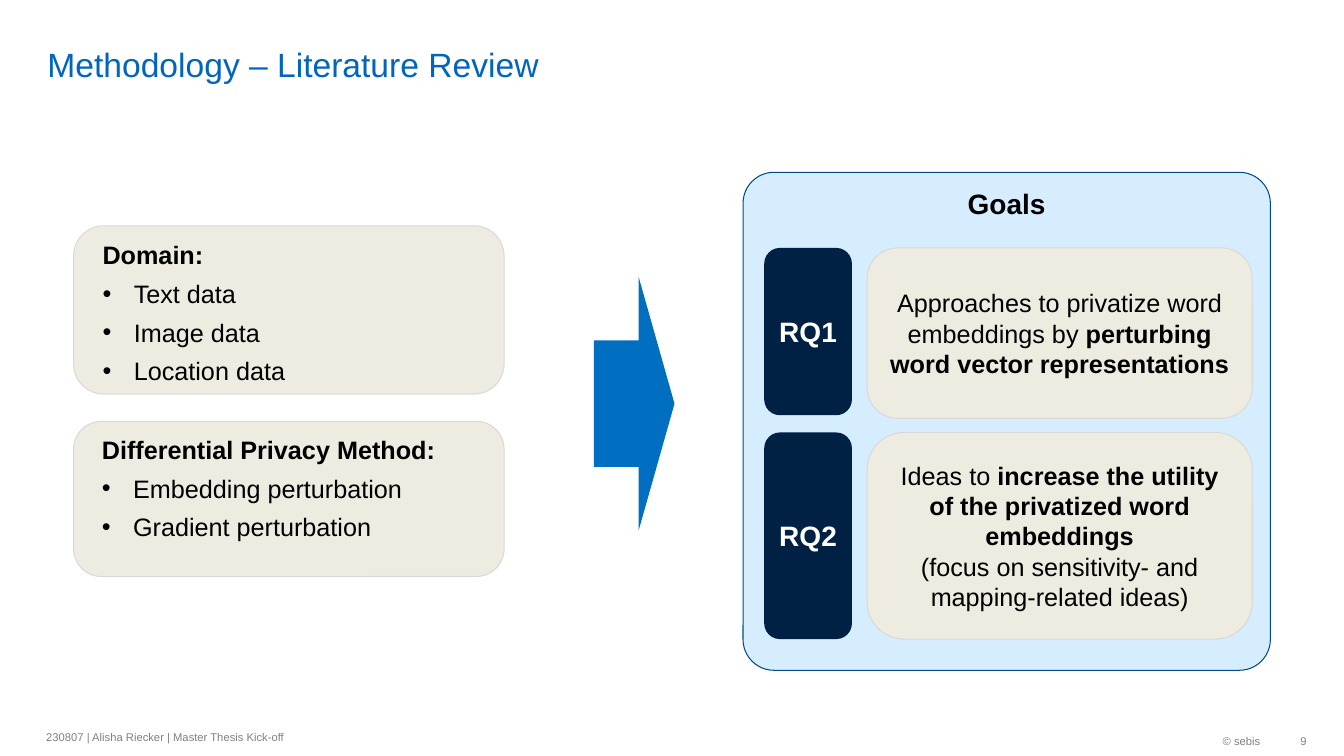
from dataclasses import dataclass

from lxml import etree
from pptx import Presentation
from pptx.dml.color import RGBColor
from pptx.enum.shapes import MSO_SHAPE as Shape
from pptx.enum.text import MSO_ANCHOR as Anchor, MSO_AUTO_SIZE as AutoSize, PP_ALIGN as Align
from pptx.oxml.ns import qn
from pptx.util import Inches, Pt


@dataclass(frozen=True)
class Theme:
    font: str = "Arial"
    title: str = "0065BD"
    arrow: str = "006FC2"
    panel: str = "D5EDFF"
    panel_line: str = "004B83"
    card: str = "EEECE1"
    card_line: str = "D9D9D9"
    badge: str = "002143"
    ink: str = "000000"
    light: str = "FFFFFF"
    muted: str = "808080"
    title_size: int = 24
    heading_size: int = 20
    body_size: int = 18
    footer_size: int = 8
    corner: float = 0.179
    panel_corner: float = 0.062


class SlideBuilder:
    def __init__(self, deck, theme):
        self.theme = theme
        self.page = deck.slides.add_slide(deck.slide_layouts[5])

    def frame(self, box, anchor, left=0.1, top=0.05, right=0.1, bottom=0.05):
        frame = box.text_frame
        frame.word_wrap = True
        frame.auto_size = AutoSize.NONE
        frame.vertical_anchor = anchor
        frame.margin_left, frame.margin_right = Inches(left), Inches(right)
        frame.margin_top, frame.margin_bottom = Inches(top), Inches(bottom)
        return frame

    def add_spans(self, para, spans, size, color, align=Align.LEFT):
        """Add (text, bold) spans to a paragraph."""
        para.alignment = align
        for text, bold in spans:
            span = para.add_run()
            span.text = text
            span.font.name = self.theme.font
            span.font.size = Pt(size)
            span.font.bold = bold
            span.font.color.rgb = RGBColor.from_string(color)

    def title(self, text):
        box = self.page.shapes.title
        box.left, box.top = Inches(0.37), Inches(0.05)
        box.width, box.height = Inches(11.58), Inches(0.79)
        frame = self.frame(box, Anchor.BOTTOM, top=0, bottom=0)
        self.add_spans(frame.paragraphs[0], [(text, False)],
                       self.theme.title_size, self.theme.title)

    def footer(self, text, left, top, width, height, align, right=0.1):
        box = self.page.shapes.add_textbox(*map(Inches, (left, top, width, height)))
        frame = self.frame(box, Anchor.MIDDLE, right=right)
        self.add_spans(frame.paragraphs[0], [(text, False)],
                       self.theme.footer_size, self.theme.muted, align)

    def shape(self, kind, place, fill, line=None, adjustments=()):
        box = self.page.shapes.add_shape(kind, *map(Inches, place))
        box.shadow.inherit = False
        box.fill.solid()
        box.fill.fore_color.rgb = RGBColor.from_string(fill)
        if line:
            box.line.color.rgb = RGBColor.from_string(line)
            box.line.width = Pt(0.75)
        else:
            box.line.fill.background()
        for index, value in enumerate(adjustments):
            box.adjustments[index] = value
        return box

    def arrow(self, place):
        self.shape(Shape.RIGHT_ARROW, place, self.theme.arrow, adjustments=(0.5, 0.443))

    def card(self, place):
        return self.shape(Shape.ROUNDED_RECTANGLE, place, self.theme.card,
                          self.theme.card_line, (self.theme.corner,))

    def panel(self, heading, place):
        box = self.shape(Shape.ROUNDED_RECTANGLE, place, self.theme.panel,
                         self.theme.panel_line, (self.theme.panel_corner,))
        self.add_spans(self.frame(box, Anchor.TOP).paragraphs[0], [(heading, True)],
                       self.theme.heading_size, self.theme.ink, Align.CENTER)

    def badge(self, label, place):
        box = self.shape(Shape.ROUNDED_RECTANGLE, place, self.theme.badge,
                         adjustments=(self.theme.corner,))
        self.add_spans(self.frame(box, Anchor.MIDDLE).paragraphs[0], [(label, True)],
                       self.theme.heading_size, self.theme.light, Align.CENTER)

    def goal(self, paragraphs, place):
        frame = self.frame(self.card(place), Anchor.MIDDLE)
        for index, spans in enumerate(paragraphs):
            para = frame.add_paragraph() if index else frame.paragraphs[0]
            self.add_spans(para, spans, self.theme.body_size, self.theme.ink, Align.CENTER)

    def bullet_card(self, heading, items, place):
        frame = self.frame(self.card(place), Anchor.TOP, left=0.2)
        self.add_spans(frame.paragraphs[0], [(heading, True)],
                       self.theme.body_size, self.theme.ink)
        for item in items:
            para = frame.add_paragraph()
            para.space_before = Pt(6)
            self.add_bullet(para)
            self.add_spans(para, [(item, False)], self.theme.body_size, self.theme.ink)

    def add_bullet(self, para):
        properties = para._p.get_or_add_pPr()
        properties.set("marL", str(Inches(0.31)))
        properties.set("indent", str(Inches(-0.31)))
        etree.SubElement(properties, qn("a:buFont")).set("typeface", self.theme.font)
        etree.SubElement(properties, qn("a:buChar")).set("char", "•")


def main():
    deck = Presentation()
    deck.slide_width, deck.slide_height = Inches(13.33), Inches(7.5)
    slide = SlideBuilder(deck, Theme())

    slide.title("Methodology – Literature Review")
    slide.footer("© sebis", 10.26, 7.19, 2.34, 0.32, Align.RIGHT)
    slide.footer("230807 | Alisha Riecker | Master Thesis Kick-off",
                 0.36, 7.18, 6.38, 0.27, Align.LEFT)
    slide.footer("9", 12.6, 7.19, 0.36, 0.32, Align.RIGHT, right=0)

    slide.arrow((5.89, 2.75, 0.8, 2.51))
    slide.panel("Goals", (7.37, 1.71, 5.23, 4.94))
    questions = [
        ("RQ1", 2.46, 1.66, 1.69, [
            [("Approaches to privatize word embeddings by ", False),
             ("perturbing word vector representations", True)],
        ]),
        ("RQ2", 4.29, 2.05, 2.05, [
            [("Ideas to ", False),
             ("increase the utility of the privatized word embeddings", True)],
            [("(focus on sensitivity- and", False)],
            [("mapping-related ideas)", False)],
        ]),
    ]
    for label, top, badge_height, goal_height, paragraphs in questions:
        slide.goal(paragraphs, (8.6, top, 3.82, goal_height))
        slide.badge(label, (7.58, top, 0.87, badge_height))

    slide.bullet_card("Domain:", ["Text data", "Image data", "Location data"],
                      (0.73, 2.24, 4.27, 1.67))
    slide.bullet_card("Differential Privacy Method:",
                      ["Embedding perturbation", "Gradient perturbation"],
                      (0.73, 4.18, 4.27, 1.54))
    deck.save("out.pptx")


if __name__ == "__main__":
    main()
